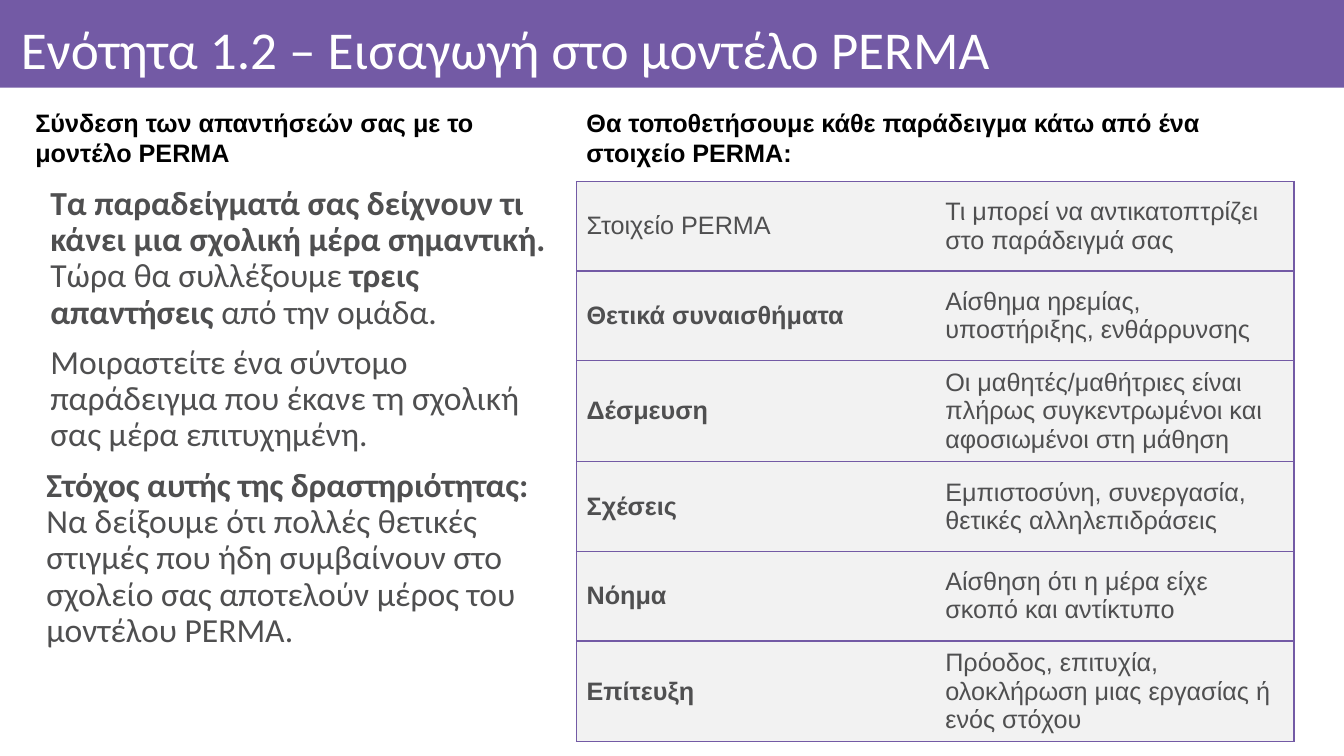
from typing import NamedTuple

from lxml import etree
from pptx import Presentation
from pptx import util as u
from pptx.dml import color
from pptx.enum import shapes, text
from pptx.oxml import ns

PURPLE, GREY, PALE, WHITE, BLACK = "735AA5", "4F4F50", "F2F2F2", "FFFFFF", "000000"
SLIDE_WIDTH, SLIDE_HEIGHT = 33.87, 19.05
LEFT_X, RIGHT_X, RIGHT_WIDTH = 0.28, 14.53, 18.08
CONTENT_TOP, COLUMN_WIDTH = 4.57, 13.89
ROW_HEIGHT = 2.26


class Run(NamedTuple):
    words: str
    bold: bool = False


class Paragraph(NamedTuple):
    runs: list[Run]
    indent: float = 0


class Heading(NamedTuple):
    words: str
    left: float
    width: float


class Element(NamedTuple):
    name: str
    reflection: str
    bold: bool = True


TITLE = "Ενότητα 1.2 – Εισαγωγή στο μοντέλο PERMA"

HEADINGS = [
    Heading("Σύνδεση των απαντήσεών σας με το μοντέλο PERMA", 0.64, COLUMN_WIDTH),
    Heading("Θα τοποθετήσουμε κάθε παράδειγμα κάτω από ένα στοιχείο PERMA:",
            RIGHT_X, RIGHT_WIDTH),
]

INSTRUCTIONS = [
    Paragraph([
        Run("Τα παραδείγματά σας δείχνουν τι κάνει μια σχολική μέρα σημαντική.\v", True),
        Run("Τώρα θα συλλέξουμε "),
        Run("τρεις απαντήσεις ", True),
        Run("από την ομάδα."),
    ], indent=0.74),
    Paragraph([
        Run("Μοιραστείτε ένα σύντομο παράδειγμα που έκανε τη σχολική σας μέρα "
            "επιτυχημένη."),
    ], indent=0.74),
    Paragraph([
        Run("Στόχος αυτής της δραστηριότητας:\v", True),
        Run("Να δείξουμε ότι πολλές θετικές στιγμές που ήδη συμβαίνουν στο σχολείο "
            "σας αποτελούν μέρος του μοντέλου PERMA."),
    ], indent=0.64),
]

ELEMENTS = [
    Element("Στοιχείο PERMA", "Τι μπορεί να αντικατοπτρίζει στο παράδειγμά σας", False),
    Element("Θετικά συναισθήματα", "Αίσθημα ηρεμίας, υποστήριξης, ενθάρρυνσης"),
    Element("Δέσμευση", "Οι μαθητές/μαθήτριες είναι πλήρως συγκεντρωμένοι και "
                        "αφοσιωμένοι στη μάθηση"),
    Element("Σχέσεις", "Εμπιστοσύνη, συνεργασία, θετικές αλληλεπιδράσεις"),
    Element("Νόημα", "Αίσθηση ότι η μέρα είχε σκοπό και αντίκτυπο"),
    Element("Επίτευξη", "Πρόοδος, επιτυχία, ολοκλήρωση μιας εργασίας ή ενός στόχου"),
]


def rgb(value: str) -> color.RGBColor:
    return color.RGBColor.from_string(value)


def write(frame, paragraphs: list[Paragraph], *, size: float, font: str, ink: str,
          line_spacing: float | None = None, space_before: float | None = None) -> None:
    """Fill a text frame; a vertical tab in a run becomes a line break."""
    frame.word_wrap = True
    for index, paragraph in enumerate(paragraphs):
        line = frame.add_paragraph() if index else frame.paragraphs[0]
        if line_spacing is not None:
            line.line_spacing = line_spacing
        if space_before is not None:
            line.space_before = u.Pt(space_before)
        if paragraph.indent:
            properties = line._p.get_or_add_pPr()
            properties.set("marL", str(u.Cm(paragraph.indent)))
            properties.set("indent", "0")
        for part in paragraph.runs:
            words, *after_break = part.words.split("\v")
            run = line.add_run()
            run.text = words
            run.font.size = u.Pt(size)
            run.font.name = font
            run.font.bold = part.bold
            run.font.color.rgb = rgb(ink)
            if after_break:
                line.add_line_break()


def add_text_frame(slide, left: float, top: float, width: float, height: float):
    return slide.shapes.add_textbox(
        u.Cm(left), u.Cm(top), u.Cm(width), u.Cm(height)).text_frame


def set_borders(cell, visible: str) -> None:
    """Draw the sides named in visible (from L, R, T, B) and hide the others."""
    properties = cell._tc.get_or_add_tcPr()
    for side in "LRTB":
        edge = etree.SubElement(properties, ns.qn(f"a:ln{side}"), w=str(u.Pt(1)))
        if side in visible:
            fill = etree.SubElement(edge, ns.qn("a:solidFill"))
            etree.SubElement(fill, ns.qn("a:srgbClr"), val=PURPLE)
        else:
            etree.SubElement(edge, ns.qn("a:noFill"))


def add_title(slide) -> None:
    bar = slide.shapes.add_shape(
        shapes.MSO_SHAPE.RECTANGLE, 0, 0, u.Cm(SLIDE_WIDTH), u.Cm(2.21))
    bar.shadow.inherit = False
    bar.fill.solid()
    bar.fill.fore_color.rgb = rgb(PURPLE)
    bar.line.fill.background()

    title = add_text_frame(slide, LEFT_X, 0.23, 33.17, 1.98)
    title.vertical_anchor = text.MSO_ANCHOR.MIDDLE
    title.margin_left = u.Cm(0.25)
    title.margin_right = title.margin_top = title.margin_bottom = u.Cm(0.15)
    write(title, [Paragraph([Run(TITLE)])], size=38, font="Calibri", ink=WHITE)


def add_elements_table(slide) -> None:
    table = slide.shapes.add_table(
        len(ELEMENTS), 2, u.Cm(RIGHT_X), u.Cm(CONTENT_TOP),
        u.Cm(RIGHT_WIDTH), u.Cm(ROW_HEIGHT * len(ELEMENTS))).table
    table.first_row = table.horz_banding = False
    for row, element in enumerate(ELEMENTS):
        runs = [Run(element.name, element.bold), Run(element.reflection)]
        for column, (run, sides) in enumerate(zip(runs, ("LTB", "RTB"))):
            cell = table.cell(row, column)
            set_borders(cell, sides)
            cell.fill.solid()
            cell.fill.fore_color.rgb = rgb(PALE)
            cell.vertical_anchor = text.MSO_ANCHOR.MIDDLE
            write(cell.text_frame, [Paragraph([run])], size=18, font="Arial", ink=GREY)


def main() -> None:
    deck = Presentation()
    deck.slide_width, deck.slide_height = u.Cm(SLIDE_WIDTH), u.Cm(SLIDE_HEIGHT)
    slide = deck.slides.add_slide(deck.slide_layouts[6])

    add_title(slide)
    for heading in HEADINGS:
        frame = add_text_frame(slide, heading.left, 2.57, heading.width, 1.8)
        write(frame, [Paragraph([Run(heading.words, True)])],
              size=18, font="Arial", ink=BLACK)
    instructions = add_text_frame(slide, LEFT_X, CONTENT_TOP, COLUMN_WIDTH, 14.2)
    write(instructions, INSTRUCTIONS, size=24, font="Calibri", ink=GREY,
          line_spacing=0.9, space_before=10)
    add_elements_table(slide)

    deck.save("out.pptx")


if __name__ == "__main__":
    main()
